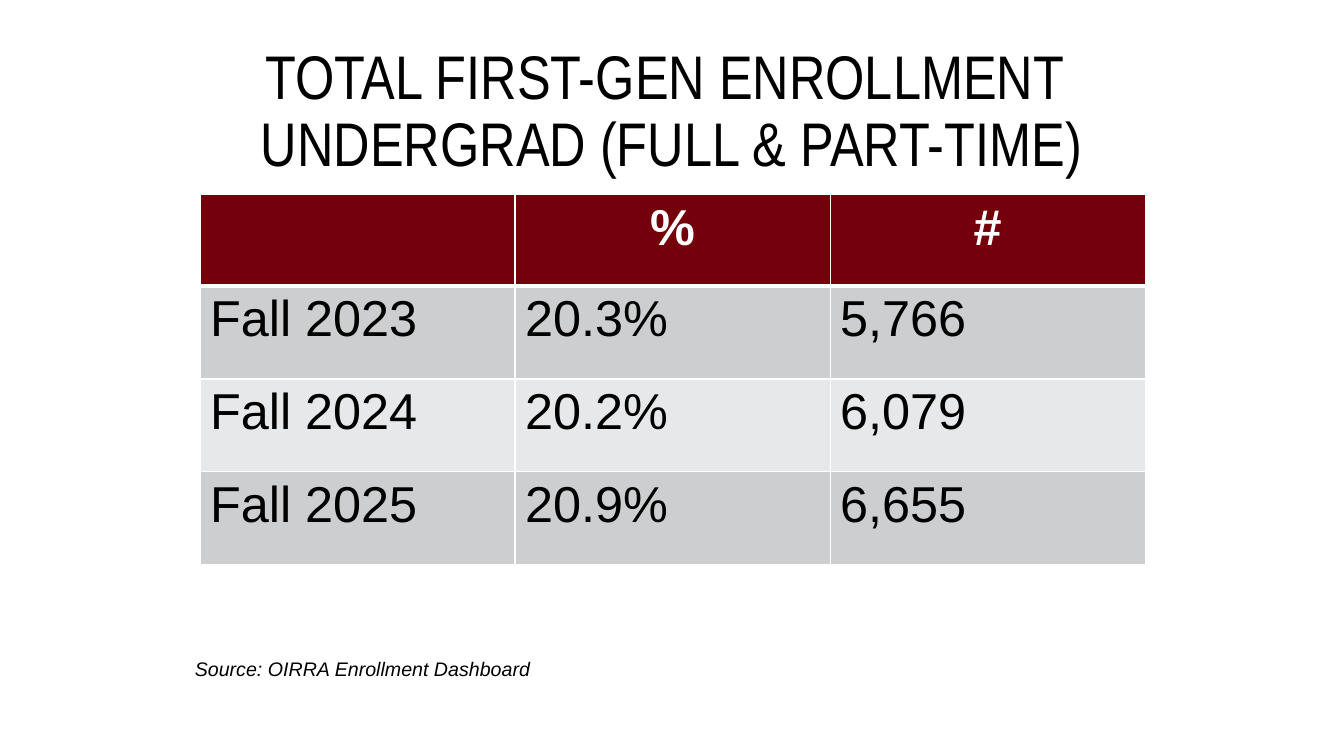
import pptx
import pptx.util
import pptx.dml.color
import pptx.enum.text
import pptx.oxml
from dataclasses import dataclass

Cm = pptx.util.Cm
Align = pptx.enum.text.PP_ALIGN


@dataclass(frozen=True)
class Theme:
    black: str = "000000"
    white: str = "FFFFFF"
    garnet: str = "73000A"
    bands: tuple = ("CCCECF", "E7E8E9")
    narrow: str = "Arial Narrow"
    sans: str = "Arial"
    title: int = 44
    body: int = 36
    note: int = 14


theme = Theme()


def style(para, face, size, color, bold=False, italic=False):
    font = para.font
    font.name, font.size = face, pptx.util.Pt(size)
    font.bold, font.italic = bold, italic
    font.color.rgb = pptx.dml.color.RGBColor.from_string(color)


def border(cell, side, width):
    space = "http://schemas.openxmlformats.org/drawingml/2006/main"
    cell._tc.get_or_add_tcPr().append(pptx.oxml.parse_xml(
        f'<a:ln{side} xmlns:a="{space}" w="{pptx.util.Pt(width)}">'
        f'<a:solidFill><a:srgbClr val="{theme.white}"/></a:solidFill>'
        f'</a:ln{side}>'))


deck = pptx.Presentation()
deck.slide_width, deck.slide_height = Cm(33.87), Cm(19.05)
slide = deck.slides.add_slide(deck.slide_layouts[6])

# Title
box = slide.shapes.add_textbox(Cm(2.33), Cm(1.01), Cm(29.21), Cm(3.68))
frame = box.text_frame
frame.word_wrap = True
frame.vertical_anchor = pptx.enum.text.MSO_ANCHOR.MIDDLE
para = frame.paragraphs[0]
para.add_run().text = "TOTAL FIRST-GEN ENROLLMENT "
para.add_line_break()
para.add_run().text = "UNDERGRAD (FULL & PART-TIME)"
para.alignment, para.line_spacing = Align.CENTER, 0.9
style(para, theme.narrow, theme.title, theme.black)

# Enrollment table
rows = [
    ("", "%", "#"),
    ("Fall 2023", "20.3%", "5,766"),
    ("Fall 2024", "20.2%", "6,079"),
    ("Fall 2025", "20.9%", "6,655"),
]
table = slide.shapes.add_table(
    len(rows), 3, Cm(5.04), Cm(4.91), Cm(23.82), Cm(9.3)).table
for r, row in enumerate(rows):
    head = r == 0
    table.rows[r].height = Cm(2.3 if head else 2.34)
    for c, text in enumerate(row):
        cell = table.cell(r, c)
        for side in "LRTB":
            thick = (head and side == "B") or (r == 1 and side == "T")
            border(cell, side, 3 if thick else 1)
        cell.fill.solid()
        cell.fill.fore_color.rgb = pptx.dml.color.RGBColor.from_string(
            theme.garnet if head else theme.bands[(r - 1) % 2])
        cell.text = text
        para = cell.text_frame.paragraphs[0]
        para.alignment = Align.CENTER if head else Align.LEFT
        style(para, theme.sans, theme.body,
              theme.white if head else theme.black, bold=head)

# Source note
box = slide.shapes.add_textbox(Cm(4.66), Cm(16.44), Cm(16.93), Cm(0.86))
box.text_frame.word_wrap = True
para = box.text_frame.paragraphs[0]
para.text = "Source: OIRRA Enrollment Dashboard"
style(para, theme.sans, theme.note, theme.black, italic=True)

deck.save("out.pptx")
